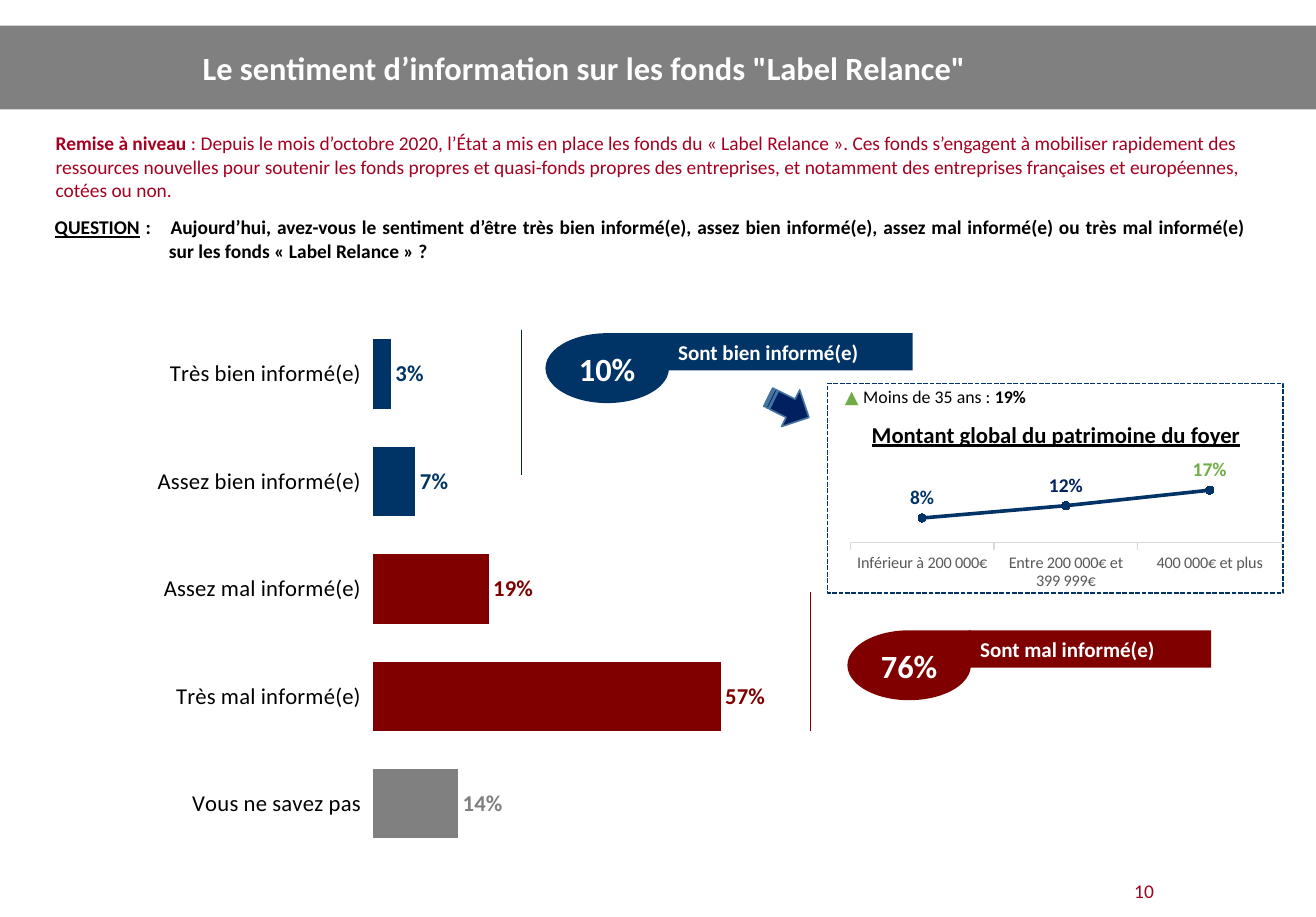
import pptx
import pptx.chart.data
import pptx.dml.color
import pptx.enum.chart
import pptx.enum.dml
import pptx.enum.shapes
import pptx.enum.text
import pptx.oxml
import pptx.oxml.ns
import pptx.util

PX = 9144  # 100 px to the inch
COLORS = {
    "navy": "003366", "ink": "002060", "red": "800000", "crimson": "A50021",
    "grey": "808080", "green": "70AD47", "steel": "43739E", "axis": "D9D9D9",
    "label": "595959", "black": "000000", "white": "FFFFFF",
}
SHAPE = pptx.enum.shapes.MSO_SHAPE
ALIGN = pptx.enum.text.PP_ALIGN
MIDDLE = pptx.enum.text.MSO_ANCHOR.MIDDLE
CHART = pptx.enum.chart


def rgb(color):
    return pptx.dml.color.RGBColor.from_string(COLORS[color])


def place(*lengths):
    return [pptx.util.Emu(length * PX) for length in lengths]


def style(font, size, color="black", name="Calibri", **formats):
    formats.update(size=pptx.util.Pt(size), name=name)
    for key, value in formats.items():
        setattr(font, key, value)
    font.color.rgb = rgb(color)


def write(shape, runs, align=ALIGN.LEFT, **frame_formats):
    """Fill a shape with one paragraph; each run is (text, font formats)."""
    frame = shape.text_frame
    frame.word_wrap = True
    for key, value in frame_formats.items():
        setattr(frame, key, value)
    paragraph = frame.paragraphs[0]
    paragraph.alignment = align
    for text, formats in runs:
        run = paragraph.add_run()
        run.text = text
        style(run.font, **formats)
    return paragraph


def add_text(slide, box, runs, **formats):
    return write(slide.shapes.add_textbox(*place(*box)), runs, **formats)


def add_block(slide, kind, box, fill, line=None, width=1):
    block = slide.shapes.add_shape(kind, *place(*box))
    block.shadow.inherit = False
    block.fill.solid()
    block.fill.fore_color.rgb = rgb(fill)
    if line:
        block.line.color.rgb = rgb(line)
        block.line.width = pptx.util.Pt(width)
    else:
        block.line.fill.background()
    return block


def add_rule(slide, x, top, bottom, color):
    rule = slide.shapes.add_connector(
        pptx.enum.shapes.MSO_CONNECTOR.STRAIGHT, *place(x, top, x, bottom))
    rule.line.color.rgb = rgb(color)
    rule.line.width = pptx.util.Pt(0.5)
    properties = rule._element.spPr
    properties.append(properties.makeelement(pptx.oxml.ns.qn("a:effectLst"), {}))


def add_percent_chart(slide, box, kind, shares, plot, top_value, label_size, tick_format):
    """Add a one-series percentage chart with a hidden value axis."""
    data = pptx.chart.data.CategoryChartData(number_format="0%")
    data.categories = list(shares)
    data.add_series("Part des répondants", list(shares.values()))
    chart = slide.shapes.add_chart(kind, *place(*box), data).chart
    chart.has_legend = chart.has_title = False
    style(chart.font, 10)
    chart.value_axis.visible = False
    chart.value_axis.has_major_gridlines = False
    chart.value_axis.minimum_scale = 0
    chart.value_axis.maximum_scale = top_value
    style(chart.category_axis.tick_labels.font, **tick_format)

    drawn = chart.plots[0]
    drawn.vary_by_categories = False
    drawn.has_data_labels = True
    labels = drawn.data_labels
    labels.show_value = True
    labels.number_format, labels.number_format_is_linked = "0%", False
    style(labels.font, label_size, "navy", bold=True)

    names = ("x", "y", "w", "h")
    sizes = "".join(f'<c:{n} val="{v}"/>' for n, v in zip(names, plot))
    layout = pptx.oxml.parse_xml(
        f'<c:layout {pptx.oxml.ns.nsdecls("c")}><c:manualLayout>'
        '<c:layoutTarget val="inner"/><c:xMode val="edge"/><c:yMode val="edge"/>'
        f'{sizes}</c:manualLayout></c:layout>')
    area = chart._chartSpace.chart.plotArea
    for old in area.findall(pptx.oxml.ns.qn("c:layout")):
        area.remove(old)
    area.insert(0, layout)
    return chart


def color_label(point, size, color, position):
    style(point.data_label.font, size, color, bold=True)
    point.data_label.position = position


def header(slide, box):
    left, top, width, height = box
    add_block(slide, SHAPE.RECTANGLE, box, "grey")
    add_text(slide, (left + 164, top, width - 181, height),
             [("Le sentiment d’information sur les fonds \"Label Relance\"",
               dict(size=20, color="white", bold=True))], vertical_anchor=MIDDLE)


def introduction(slide, box):
    left, top, width, height = box
    crimson = dict(size=12, color="crimson")
    add_text(slide, (left, top, width - 24, 71), [
        ("Remise à niveau", dict(crimson, bold=True)),
        ("\u00a0: Depuis le mois d’octobre 2020, l’État a mis en place les fonds du "
         "« Label Relance ». Ces fonds s’engagent à mobiliser rapidement des ressources "
         "nouvelles pour soutenir les fonds propres et quasi-fonds propres des entreprises, "
         "et notamment des entreprises françaises et européennes, cotées ou non.", crimson)])
    strong = dict(size=12, bold=True)
    question = add_text(slide, (left, top + 73, width, height - 73), [
        ("QUESTION", dict(strong, underline=True)),
        (" :\tAujourd’hui, avez-vous le sentiment d’être très bien informé(e), assez bien "
         "informé(e), assez mal informé(e) ou très mal informé(e) sur les fonds "
         "« Label Relance » ?", strong)],
        align=ALIGN.JUSTIFY, margin_left=9 * PX, margin_right=36 * PX,
        margin_top=4 * PX, margin_bottom=4 * PX)
    for key, indent in {"marL": 98, "indent": -98}.items():
        question._p.get_or_add_pPr().set(key, str(indent * PX))


def answers(slide, box):
    shares = {"Très bien informé(e)": 0.03, "Assez bien informé(e)": 0.07,
              "Assez mal informé(e)": 0.19, "Très mal informé(e)": 0.57,
              "Vous ne savez pas": 0.14}
    chart = add_percent_chart(slide, box, CHART.XL_CHART_TYPE.BAR_CLUSTERED, shares,
                              (0.304, 0, 0.623, 1), 1, 14, dict(size=14))
    axis = chart.category_axis
    axis.reverse_order = True
    axis.format.line.fill.background()
    chart.plots[0].gap_width = 55
    bars = chart.plots[0].series[0]
    for index, color in enumerate(("navy", "navy", "red", "red", "grey")):
        point = bars.points[index]
        point.format.fill.solid()
        point.format.fill.fore_color.rgb = rgb(color)
        color_label(point, 14, color, CHART.XL_LABEL_POSITION.OUTSIDE_END)


def total(slide, box, share, caption, color):
    """Add a teardrop with a share and its caption bar on the right."""
    left, top, width, height = box
    bar = add_block(slide, SHAPE.RECTANGLE, (left + 104, top, width - 104, 32), color)
    write(bar, [(caption, dict(size=13, color="white", bold=True))], vertical_anchor=MIDDLE)
    drop = add_block(slide, SHAPE.TEAR, (left, top, 106, height), color)
    write(drop, [(share, dict(size=20, color="white", bold=True))],
          align=ALIGN.CENTER, vertical_anchor=MIDDLE)


def wealth_panel(slide, box):
    left, top, width, height = box
    frame = add_block(slide, SHAPE.RECTANGLE, box, "white", "navy")
    frame.line.dash_style = pptx.enum.dml.MSO_LINE.SQUARE_DOT
    add_text(slide, (left + 5, top - 3, 338, 29), [
        ("▲ ", dict(size=11, color="green", name="Lato")),
        ("Moins de 35 ans : ", dict(size=11)),
        ("19%", dict(size=11, bold=True))])
    add_text(slide, (left + 28, top + 27, 352, 34), [
        ("Montant global du patrimoine du foyer", dict(size=14, bold=True, underline=True))])

    shares = {"Inférieur à 200 000€": 0.08, "Entre 200 000€ et 399 999€": 0.12,
              "400 000€ et plus": 0.17}
    chart = add_percent_chart(slide, (left - 11, top + 64, width + 10, height),
                              CHART.XL_CHART_TYPE.LINE_MARKERS, shares,
                              (0.076, 0.11, 0.924, 0.295), 0.2, 12,
                              dict(size=10, color="label"))
    axis_line = chart.category_axis.format.line
    axis_line.color.rgb = rgb("axis")
    axis_line.width = pptx.util.Pt(0.75)
    trend = chart.plots[0].series[0]
    trend.smooth = False
    trend.format.line.color.rgb = rgb("navy")
    trend.format.line.width = pptx.util.Pt(2.25)
    trend.marker.style = CHART.XL_MARKER_STYLE.CIRCLE
    trend.marker.size = 5
    for part in (trend.marker.format.fill, trend.marker.format.line.fill):
        part.solid()
        part.fore_color.rgb = rgb("navy")
    for index, color in enumerate(("navy", "ink", "green")):
        color_label(trend.points[index], 12, color, CHART.XL_LABEL_POSITION.ABOVE)


def main():
    deck = pptx.Presentation()
    deck.slide_width, deck.slide_height = place(1129, 787)
    slide = deck.slides.add_slide(deck.slide_layouts[6])
    header(slide, (0, 22, 1129, 72))
    introduction(slide, (38, 108, 1067, 121))
    answers(slide, (64, 275, 841, 461))
    add_rule(slide, 447, 283, 408, "ink")
    add_rule(slide, 695, 508, 627, "red")
    total(slide, (468, 286, 315, 60), "10%", "Sont bien informé(e)", "navy")
    total(slide, (727, 541, 312, 60), "76%", "Sont mal informé(e)", "red")
    wealth_panel(slide, (710, 329, 391, 180))
    arrow = add_block(slide, SHAPE.STRIPED_RIGHT_ARROW, (657, 332, 39, 35), "ink", "steel")
    arrow.rotation = 26.4
    add_text(slide, (952, 750, 59, 30), [("10", dict(size=12, color="crimson"))],
             align=ALIGN.CENTER)
    deck.save("out.pptx")


if __name__ == "__main__":
    main()
